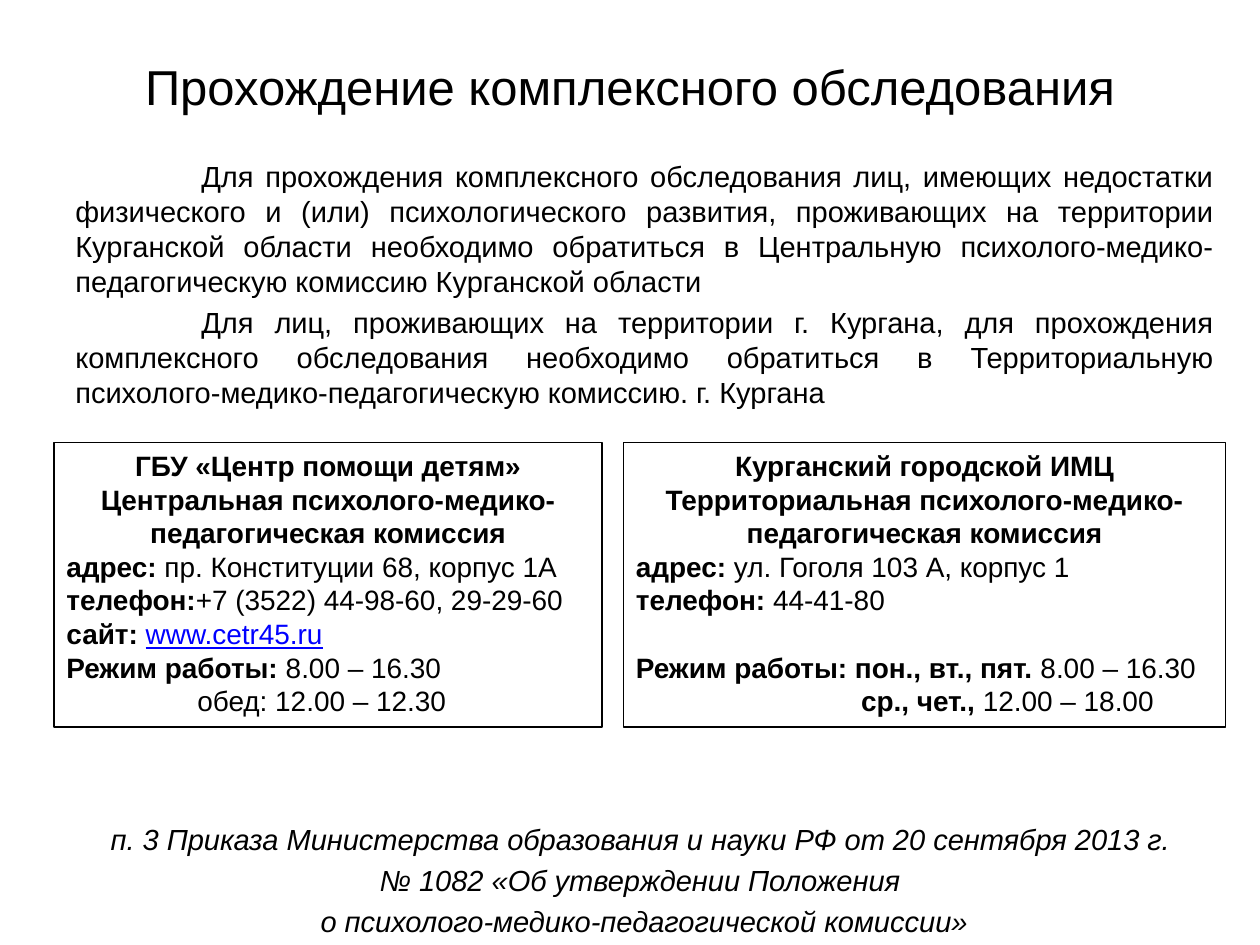
"""Build the slide on passing the comprehensive examination."""
from pptx import Presentation
from pptx.dml.color import RGBColor
from pptx.enum.shapes import MSO_SHAPE as Shape
from pptx.enum.text import MSO_ANCHOR as Anchor, PP_ALIGN as Align
from pptx.util import Cm, Pt

COLORS = {"text": "000000", "link": "0000FF"}

deck = Presentation()
deck.slide_width, deck.slide_height = Cm(25.4), Cm(19.05)
page = deck.slides.add_slide(deck.slide_layouts[6])


def add_text(left, top, width, height):
    box = page.shapes.add_textbox(Cm(left), Cm(top), Cm(width), Cm(height))
    box.text_frame.word_wrap = True
    return box.text_frame


def style(para, size, align, leading=None):
    para.alignment = align
    para.space_before = Pt(0)
    if leading:
        para.line_spacing = Pt(leading)
    for span in para.runs:
        span.font.name = "Arial"
        span.font.size = Pt(size)
        span.font.color.rgb = RGBColor.from_string(COLORS["text"])


title = add_text(1.27, 0.76, 22.86, 1.96)
title.vertical_anchor = Anchor.MIDDLE
title.text = "Прохождение комплексного обследования"
style(title.paragraphs[0], 28, Align.CENTER)

intro = add_text(1.27, 3.06, 23.42, 5.4)
intro.text = "\n".join([
    "Для прохождения комплексного обследования лиц, имеющих недостатки физического "
    "и (или) психологического развития, проживающих на территории Курганской области "
    "необходимо обратиться в Центральную психолого-медико-педагогическую комиссию "
    "Курганской области",
    "Для лиц, проживающих на территории г. Кургана, для прохождения комплексного "
    "обследования необходимо обратиться в Территориальную "
    "психолого-медико-педагогическую комиссию. г. Кургана",
])
for para in intro.paragraphs:
    style(para, 16.6, Align.JUSTIFY, 20)
    para._p.get_or_add_pPr().set("indent", str(Cm(2.54)))

source = add_text(1.27, 16.44, 23.42, 2.5)
source.text = "\n".join([
    "п. 3 Приказа Министерства образования и науки РФ от 20 сентября 2013 г. ",
    "№ 1082 «Об утверждении Положения ",
    "о психолого-медико-педагогической комиссии»",
])
for para in source.paragraphs:
    style(para, 16.6, Align.CENTER, 20)
    para.runs[0].font.italic = True

for frame in (intro, source):
    for para in frame.paragraphs[1:]:
        para.space_before = Pt(3.3)

CONTACTS = [
    {
        "left": 1.09, "width": 11.05, "line": 1, "indent": 2.64, "gap": 0,
        "heading": ["ГБУ «Центр помощи детям»",
                    "Центральная психолого-медико-педагогическая комиссия"],
        "rows": [("адрес:", " пр. Конституции 68, корпус 1А"),
                 ("телефон:", "+7 (3522) 44-98-60, 29-29-60"),
                 ("сайт: ", "www.cetr45.ru"),
                 ("Режим работы: ", "8.00 – 16.30"),
                 ("", "обед: 12.00 – 12.30")],
    },
    {
        "left": 12.57, "width": 12.14, "line": 0.75, "indent": 4.54, "gap": 19.2,
        "heading": ["Курганский городской ИМЦ",
                    "Территориальная психолого-медико-педагогическая комиссия"],
        "rows": [("адрес:", " ул. Гоголя 103 А, корпус 1"),
                 ("телефон:", " 44-41-80"),
                 ("Режим работы: пон., вт., пят. ", "8.00 – 16.30"),
                 ("ср., чет., ", "12.00 – 18.00")],
    },
]

for contact in CONTACTS:
    box = page.shapes.add_shape(Shape.RECTANGLE, Cm(contact["left"]), Cm(8.92),
                                Cm(contact["width"]), Cm(5.74))
    box.shadow.inherit = False
    box.fill.background()
    box.line.color.rgb = RGBColor.from_string(COLORS["text"])
    box.line.width = Pt(contact["line"])
    frame = box.text_frame
    frame.word_wrap = True
    frame.vertical_anchor = Anchor.TOP
    frame.text = "\n".join(contact["heading"])
    for para in frame.paragraphs:
        style(para, 16, Align.CENTER, 19.2)
        para.runs[0].font.bold = True
    for label, value in contact["rows"]:
        para = frame.add_paragraph()
        for text, bold in ((label, True), (value, False)):
            if text:
                span = para.add_run()
                span.text = text
                span.font.bold = bold
        style(para, 16, Align.LEFT, 19.2)
        if label.startswith("Режим"):
            para.space_before = Pt(contact["gap"])
        if label.startswith("сайт"):
            span.font.underline = True
            span.font.color.rgb = RGBColor.from_string(COLORS["link"])
    para._p.get_or_add_pPr().set("marL", str(Cm(contact["indent"])))

deck.save("out.pptx")
